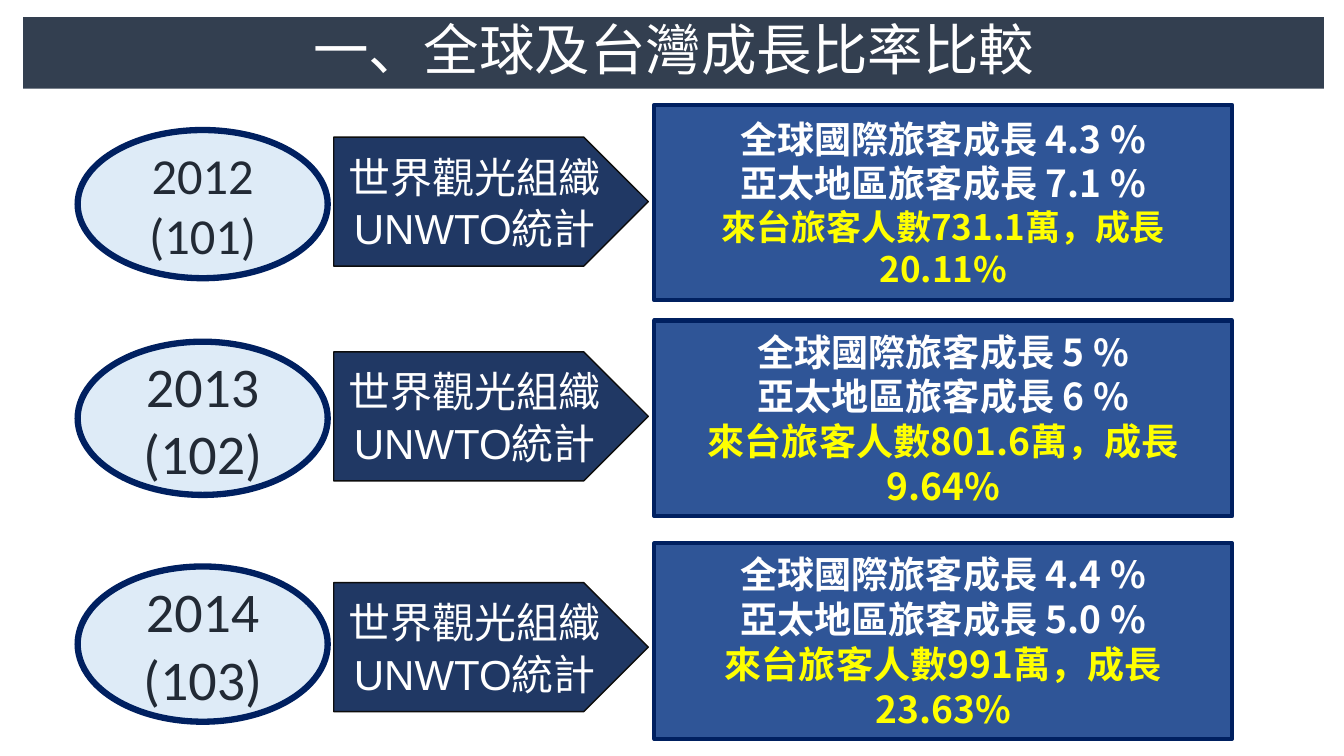
from lxml.etree import SubElement
from pptx import Presentation
from pptx.dml.color import RGBColor
from pptx.enum.shapes import MSO_SHAPE as Shape
from pptx.enum.text import MSO_ANCHOR as Anchor, PP_ALIGN as Align
from pptx.oxml.ns import qn
from pptx.util import Inches, Pt

CJK = "Noto Sans CJK SC"
WHITE, YELLOW, NAVY = "FFFFFF", "FFFF00", "002060"

# Each column: left, width
YEAR_COLUMN = (0.77, 2.48)
SOURCE_COLUMN = (3.31, 3.12)
GROWTH_COLUMN = (6.49, 5.73)
SOURCE_HEIGHT, GROWTH_HEIGHT = 1.28, 1.94


def add_panel(kind, column, top, height, fill, line=None, weight=0):
    """Add a filled shape in a column and return its text frame."""
    left, width = column
    panel = slide.shapes.add_shape(
        kind, Inches(left), Inches(top), Inches(width), Inches(height))
    panel.shadow.inherit = False
    panel.fill.solid()
    panel.fill.fore_color.rgb = RGBColor.from_string(fill)
    if line:
        panel.line.color.rgb = RGBColor.from_string(line)
        panel.line.width = Pt(weight)
    else:
        panel.line.fill.background()
    frame = panel.text_frame
    frame.word_wrap = True
    frame.vertical_anchor = Anchor.MIDDLE
    return frame


def add_line(frame, *pieces, size, color=WHITE, bold=False, spacing=None):
    """Add a centred paragraph made of (text, font) pieces."""
    first = frame.paragraphs[0]
    para = frame.add_paragraph() if first.runs else first
    para.alignment = Align.CENTER
    if spacing:
        para.line_spacing = spacing
    for text, font in pieces:
        span = para.add_run()
        span.text = text
        span.font.name = font
        span.font.size = Pt(size)
        span.font.bold = bold
        span.font.color.rgb = RGBColor.from_string(color)
        SubElement(span.font._element, qn("a:ea"), typeface=font)


deck = Presentation()
deck.slide_width, deck.slide_height = Inches(13.33), Inches(7.5)
slide = deck.slides.add_slide(deck.slide_layouts[6])

title = add_panel(Shape.RECTANGLE, (0.23, 12.9), 0.17, 0.71, "333F50")
add_line(title, ("一、全球及台灣成長比率比較", CJK), size=39.6, spacing=0.9)

# year, local year, (oval top, height), year size, arrow top, box top,
# world growth, Asia-Pacific growth, Taiwan visitors, Taiwan size and spacing
years = [
    ("2012", "(101)", (1.29, 1.47), 36, 1.36, 1.04,
     "4.3", "7.1", "731.1萬，成長20.11%", 25, 30),
    ("2013", "(102)", (3.39, 1.52), 40, 3.49, 3.18,
     "5", "6", "801.6萬，成長9.64%", 26.5, 32),
    ("2014", "(103)", (5.62, 1.54), 40, 5.78, 5.39,
     "4.4", "5.0", "991萬，成長23.63%", 26.5, 32),
]

for (year, local_year, oval_place, year_size, arrow_top, box_top,
     world, asia, taiwan, taiwan_size, taiwan_spacing) in years:
    oval = add_panel(Shape.OVAL, YEAR_COLUMN, *oval_place, "DEEBF7", NAVY, 4.5)
    for label in (year, local_year):
        add_line(oval, (label, "Calibri"), size=year_size, color="222A35")

    arrow = add_panel(Shape.PENTAGON, SOURCE_COLUMN, arrow_top, SOURCE_HEIGHT,
                      "203864", "0D0D0D", 1)
    add_line(arrow, ("世界觀光組織", CJK), size=30, spacing=Pt(37))
    add_line(arrow, ("UNWTO", "Arial"), ("統計", CJK), size=30, spacing=Pt(37))

    box = add_panel(Shape.RECTANGLE, GROWTH_COLUMN, box_top, GROWTH_HEIGHT,
                    "2F5597", NAVY, 3)
    for region, growth in (("全球國際", world), ("亞太地區", asia)):
        add_line(box, (f"{region}旅客成長 {growth} %", CJK),
                 size=26.5, bold=True, spacing=Pt(32))
    add_line(box, (f"來台旅客人數{taiwan}", CJK), size=taiwan_size,
             color=YELLOW, bold=True, spacing=Pt(taiwan_spacing))

deck.save("out.pptx")
